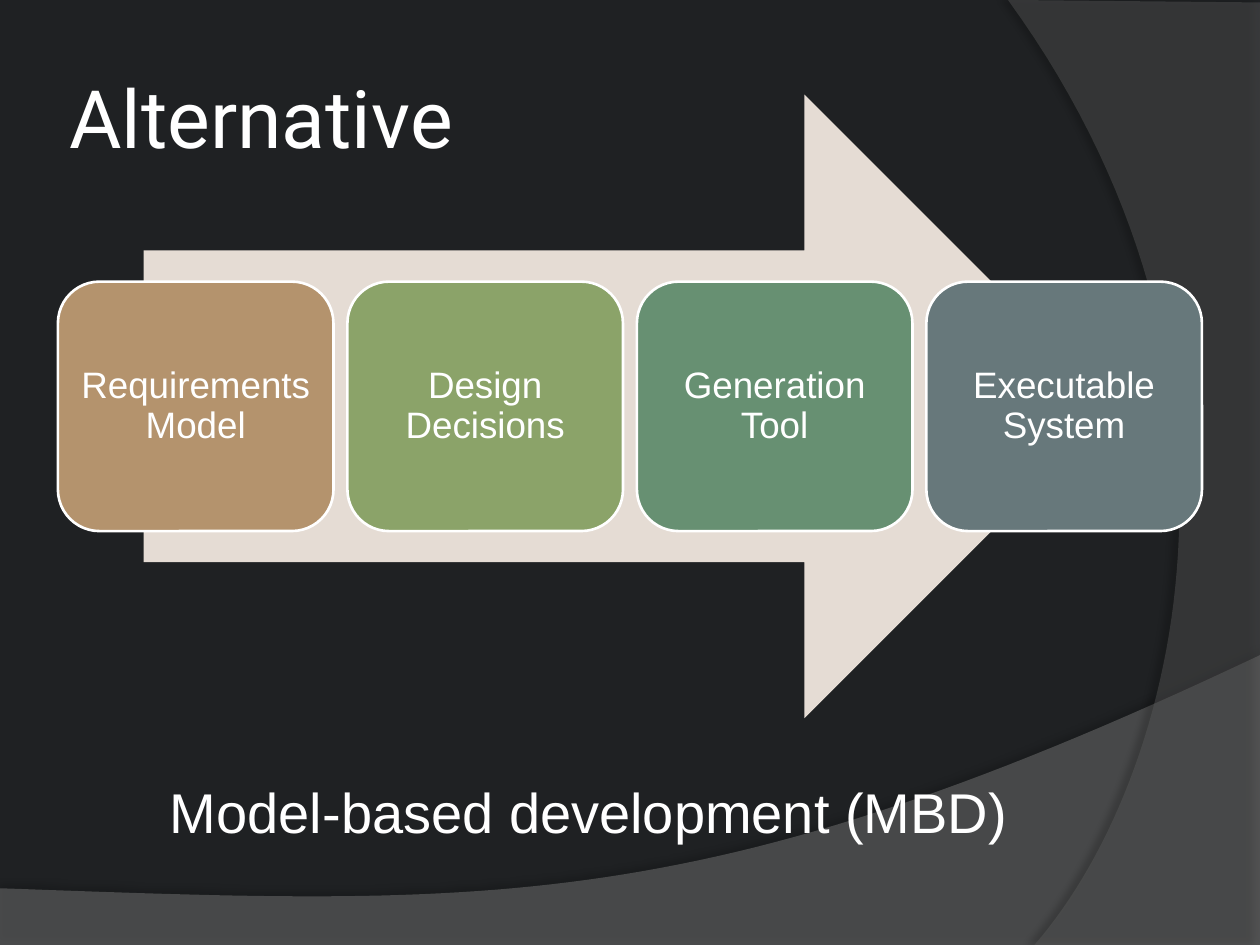
from lxml import etree
from pptx import Presentation
from pptx.dml.color import RGBColor
from pptx.enum.shapes import MSO_SHAPE
from pptx.enum.text import MSO_ANCHOR, MSO_AUTO_SIZE, PP_ALIGN
from pptx.oxml import parse_xml
from pptx.oxml.ns import qn
from pptx.util import Inches, Pt

WHITE = "FFFFFF"
STEPS = [
    ("Requirements Model", "B4936D"),
    ("Design Decisions", "8BA369"),
    ("Generation Tool", "679072"),
    ("Executable System", "67787B"),
]


def paint(fill, color):
    fill.solid()
    fill.fore_color.rgb = RGBColor.from_string(color)


def write(tf, text, size, font="Arial", align=PP_ALIGN.LEFT, spacing=1.0,
          anchor=MSO_ANCHOR.TOP, wrap=True, inset=None):
    tf.word_wrap = wrap
    tf.vertical_anchor = anchor
    if inset is not None:
        tf.margin_left = tf.margin_right = Inches(inset)
        tf.margin_top = tf.margin_bottom = Inches(inset)
    p = tf.paragraphs[0]
    p.alignment = align
    p.line_spacing = spacing
    r = p.add_run()
    r.text = text
    r.font.size = Pt(size)
    r.font.name = font
    paint(r.font.fill, WHITE)


def add_shape(s, kind, box, color):
    sp = s.shapes.add_shape(kind, *map(Inches, box))
    sp.shadow.inherit = False
    paint(sp.fill, color)
    sp.line.fill.background()
    return sp


def curve(p0, p1, p2, p3, steps=60):
    """Points along a cubic Bezier curve, both ends included."""
    points = []
    for i in range(steps + 1):
        t = i / steps
        weights = ((1 - t) ** 3, 3 * t * (1 - t) ** 2, 3 * t * t * (1 - t), t ** 3)
        points.append(tuple(sum(w * p[axis] for w, p in zip(weights, (p0, p1, p2, p3)))
                            for axis in (0, 1)))
    return points


def add_swoosh(s, points, color, opacity, shadow_opacity, blur, distance, angle):
    """Translucent outline with a soft shadow along its curved edge."""
    points = [(Inches(x), Inches(y)) for x, y in points]
    builder = s.shapes.build_freeform(*points[0])
    builder.add_line_segments(points[1:], close=True)
    sp = builder.convert_to_shape()
    paint(sp.fill, color)
    sp.line.fill.background()
    sp.shadow.inherit = False
    clr = sp.fill._xPr.find(qn("a:solidFill"))[0]
    etree.SubElement(clr, qn("a:alpha"), val=str(opacity * 1000))
    effects = sp._element.spPr.find(qn("a:effectLst"))
    effects.append(parse_xml(
        '<a:outerShdw xmlns:a="http://schemas.openxmlformats.org/drawingml/2006/main"'
        f' blurRad="{Pt(blur)}" dist="{Pt(distance)}" dir="{angle * 60000}"'
        ' algn="ctr" rotWithShape="0"><a:srgbClr val="000000">'
        f'<a:alpha val="{shadow_opacity * 1000}"/></a:srgbClr></a:outerShdw>'))


def add_backdrop(s, width, height):
    paint(s.background.fill, "1F2123")
    bottom = [(0, height), (width, height)]
    bottom += curve((width, 5.2), (5.59, 7.29), (3.91, 7.19), (0, 7.05))
    add_swoosh(s, bottom, "7F7F7F", 45, 35, 4, 3.5, 270)
    right = [(width, 0.02), (width, height)]
    right += curve((8.21, height), (9.35, 6.19), (10.18, 3), (8, 0))
    add_swoosh(s, right, "5E5E5E", 40, 45, 4, 4, 180)


def add_title(s, box, text):
    title = s.shapes.title
    title.left, title.top, title.width, title.height = map(Inches, box)
    write(title.text_frame, text, 46, font="Roboto",
          anchor=MSO_ANCHOR.MIDDLE, inset=0.05)


def add_process(s, box, steps, gap=0.11):
    """Row of equal steps over a wide arrow."""
    left, top, width, height = box
    arrow_width = 0.85 * width
    add_shape(s, MSO_SHAPE.RIGHT_ARROW,
              (left + (width - arrow_width) / 2, top, arrow_width, height), "E5DCD4")
    step_width = (width - gap * (len(steps) - 1)) / len(steps)
    step_height = 0.4 * height
    for i, (text, color) in enumerate(steps):
        sp = add_shape(s, MSO_SHAPE.ROUNDED_RECTANGLE,
                       (left + i * (step_width + gap), top + 0.3 * height,
                        step_width, step_height), color)
        paint(sp.line.fill, WHITE)
        sp.line.width = Pt(1.5)
        write(sp.text_frame, text, 21, align=PP_ALIGN.CENTER, spacing=0.9,
              anchor=MSO_ANCHOR.MIDDLE, inset=0.08)


def add_caption(s, box, text):
    tf = s.shapes.add_textbox(*map(Inches, box)).text_frame
    write(tf, text, 32, wrap=False)
    tf.auto_size = MSO_AUTO_SIZE.SHAPE_TO_FIT_TEXT


def main():
    prs = Presentation()
    prs.slide_width, prs.slide_height = Inches(10), Inches(7.5)
    s = prs.slides.add_slide(prs.slide_layouts[5])
    add_backdrop(s, 10, 7.5)
    add_title(s, (0.5, 0.3, 8.17, 1.25), "Alternative")
    add_process(s, (0.46, 0.75, 9.08, 4.95), STEPS)
    add_caption(s, (1.25, 6.12, 6.9, 0.64), "Model-based development (MBD)")
    prs.save("out.pptx")


if __name__ == "__main__":
    main()
